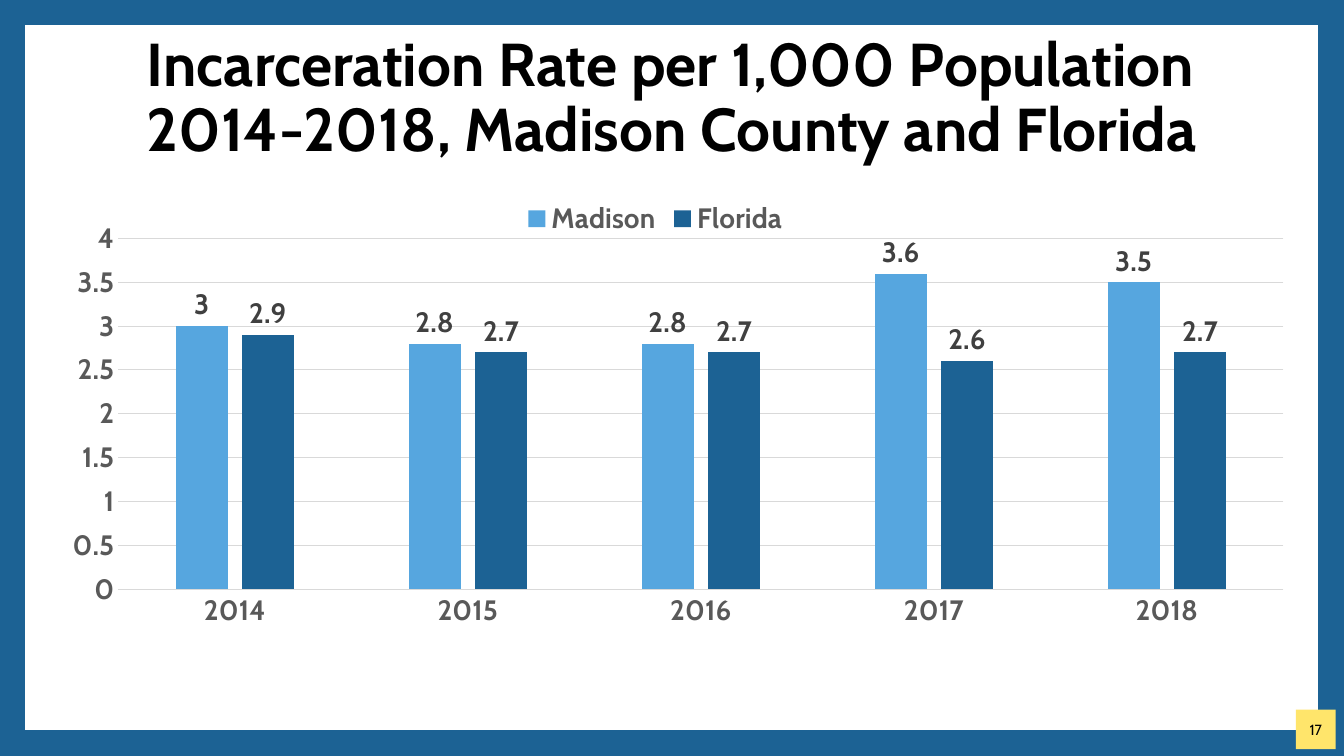
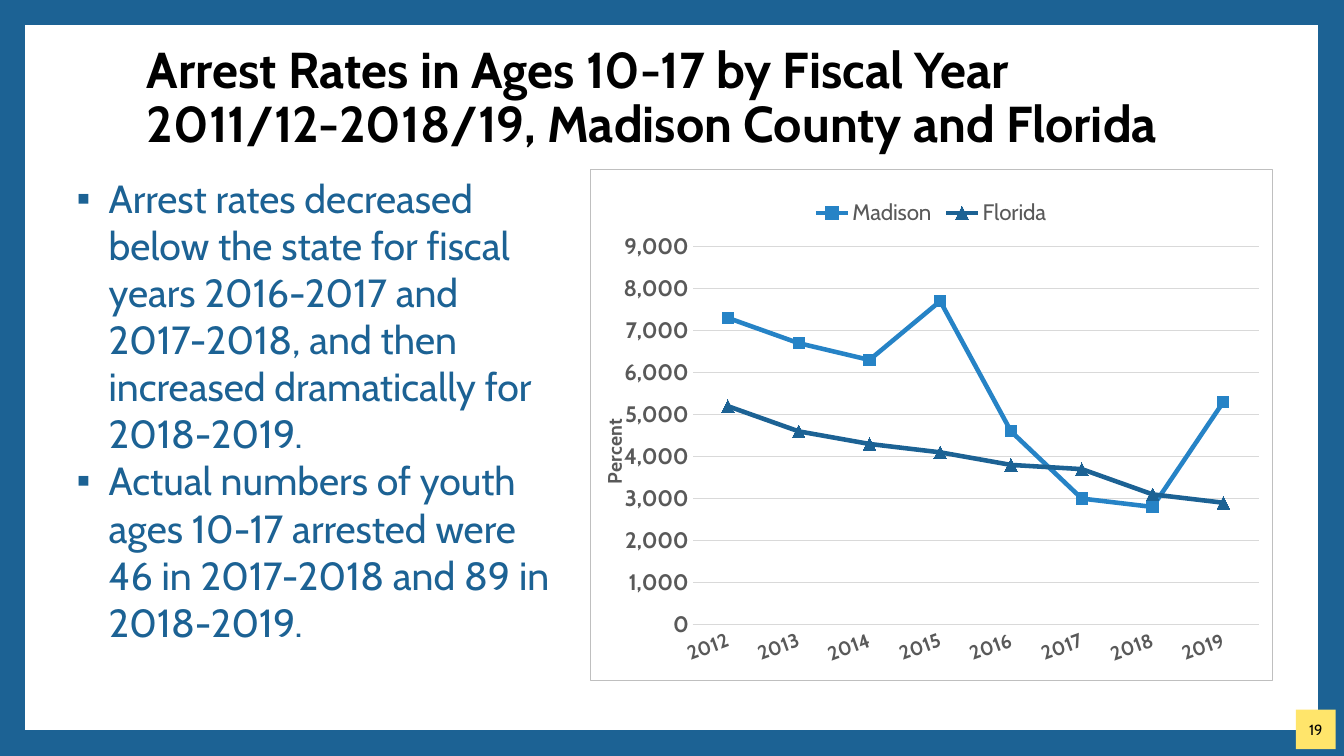
"""Build two slides charting incarceration and youth arrest rates."""
from dataclasses import dataclass

from lxml.etree import SubElement
from pptx import Presentation
from pptx.chart.chart import Chart
from pptx.chart.data import CategoryChartData
from pptx.dml.color import RGBColor
from pptx.enum.chart import (XL_CHART_TYPE, XL_LABEL_POSITION,
                             XL_LEGEND_POSITION, XL_MARKER_STYLE, XL_TICK_MARK)
from pptx.enum.shapes import MSO_SHAPE
from pptx.enum.text import MSO_ANCHOR, MSO_AUTO_SIZE, PP_ALIGN
from pptx.oxml import parse_xml
from pptx.oxml.ns import nsdecls, qn
from pptx.oxml.xmlchemy import BaseOxmlElement
from pptx.presentation import Presentation as Deck
from pptx.slide import Slide
from pptx.text.text import Font
from pptx.util import Cm, Length, Pt

FONT_NAME = "Cabin"
BLACK = RGBColor(0x00, 0x00, 0x00)
NAVY = RGBColor(0x1C, 0x62, 0x94)
MID_BLUE = RGBColor(0x26, 0x83, 0xC6)
SKY_BLUE = RGBColor(0x56, 0xA6, 0xDF)
YELLOW = RGBColor(0xFF, 0xE5, 0x6B)
LABEL_GRAY = RGBColor(0x40, 0x40, 0x40)
AXIS_GRAY = RGBColor(0x59, 0x59, 0x59)
GRID_GRAY = RGBColor(0xD9, 0xD9, 0xD9)
BORDER_GRAY = RGBColor(0xBF, 0xBF, 0xBF)
ANGLE_UNIT = 60000


@dataclass(frozen=True)
class Box:
    """A rectangle in centimetres."""
    left: float
    top: float
    width: float
    height: float

    def lengths(self) -> tuple[Length, Length, Length, Length]:
        """Return the rectangle as lengths."""
        return Cm(self.left), Cm(self.top), Cm(self.width), Cm(self.height)


@dataclass(frozen=True)
class SeriesSpec:
    """One series with its colour."""
    name: str
    values: tuple[float, ...]
    color: RGBColor


@dataclass(frozen=True)
class ChartSpec:
    """The data, scale and text sizes of a chart."""
    kind: XL_CHART_TYPE
    box: Box
    first_year: int
    series: tuple[SeriesSpec, ...]
    maximum: float
    unit: float
    number_format: str
    category_size: float
    value_size: float
    legend_size: float
    legend_bold: bool
    plot_layout: tuple[float, ...]
    legend_layout: tuple[float, ...]


FRAME = Box(0.3, 0.3, 33.25, 18.42)
BADGE = Box(32.66, 17.88, 1, 1)
TITLE = Box(3.45, 1.17, 29.21, 2.67)
FINDINGS = Box(1.55, 4.27, 12.75, 12.7)

INCARCERATION = ChartSpec(
    XL_CHART_TYPE.COLUMN_CLUSTERED, Box(1.09, 4.34, 31.57, 11.94), 2014,
    (SeriesSpec("Madison", (3, 2.8, 2.8, 3.6, 3.5), SKY_BLUE),
     SeriesSpec("Florida", (2.9, 2.7, 2.7, 2.6, 2.7), NAVY)),
    4, 0.5, "General", 20, 20, 20, True,
    (0.06, 0.14, 0.93, 0.74), (0.38, 0.05))

ARRESTS = ChartSpec(
    XL_CHART_TYPE.LINE_MARKERS, Box(14.86, 4.27, 17.22, 12.9), 2012,
    (SeriesSpec("Madison", (7300, 6700, 6300, 7700, 4600, 3000, 2800, 5300), MID_BLUE),
     SeriesSpec("Florida", (5200, 4600, 4300, 4100, 3800, 3700, 3100, 2900), NAVY)),
    9000, 1000, "#,##0", 14, 16, 16, False,
    (0.15, 0.15, 0.83, 0.74), (0.32, 0.05))

FINDING_TEXTS = (
    "Arrest rates decreased below the state for fiscal years 2016-2017 and "
    "2017-2018, and then increased dramatically for 2018-2019.",
    "Actual numbers of youth ages 10-17 arrested were 46 in 2017-2018 and 89 in "
    "2018-2019.",
)


def style_font(font: Font, size: float, color: RGBColor, bold: bool = False) -> None:
    """Apply the shared typeface with a size, colour and weight."""
    font.name = FONT_NAME
    font.size = Pt(size)
    font.bold = bold
    font.color.rgb = color


def add_frame(slide: Slide) -> None:
    """Draw the thick border around the slide."""
    frame = slide.shapes.add_shape(MSO_SHAPE.RECTANGLE, *FRAME.lengths())
    frame.shadow.inherit = False
    frame.fill.background()
    frame.line.color.rgb = NAVY
    frame.line.width = Pt(19)
    SubElement(frame.line._get_or_add_ln(), qn("a:miter"), lim="800000")


def add_badge(slide: Slide, number: int) -> None:
    """Draw the page number on its yellow square."""
    badge = slide.shapes.add_shape(MSO_SHAPE.RECTANGLE, *BADGE.lengths())
    badge.shadow.inherit = False
    badge.fill.solid()
    badge.fill.fore_color.rgb = YELLOW
    badge.line.fill.background()
    frame = badge.text_frame
    frame.margin_left = frame.margin_right = 0
    frame.vertical_anchor = MSO_ANCHOR.MIDDLE
    paragraph = frame.paragraphs[0]
    paragraph.text = str(number)
    paragraph.alignment = PP_ALIGN.CENTER
    style_font(paragraph.font, 10.5, BLACK)


def set_title(slide: Slide, lines: tuple[str, str], size: float) -> None:
    """Place the title and break it into two lines."""
    title = slide.shapes.title
    title.left, title.top, title.width, title.height = TITLE.lengths()
    frame = title.text_frame
    frame.auto_size = MSO_AUTO_SIZE.NONE
    frame.vertical_anchor = MSO_ANCHOR.MIDDLE
    paragraph = frame.paragraphs[0]
    paragraph.add_run().text = lines[0]
    paragraph.add_line_break()
    paragraph.add_run().text = lines[1]
    paragraph.alignment = PP_ALIGN.LEFT
    paragraph.line_spacing = 0.9
    style_font(paragraph.font, size, BLACK, True)


def add_slide(presentation: Deck, number: int, lines: tuple[str, str],
              title_size: float) -> Slide:
    """Add a slide with border, page number and title."""
    slide = presentation.slides.add_slide(presentation.slide_layouts[5])
    add_frame(slide)
    add_badge(slide, number)
    set_title(slide, lines, title_size)
    return slide


def add_findings(slide: Slide) -> None:
    """Write the bulleted findings."""
    frame = slide.shapes.add_textbox(*FINDINGS.lengths()).text_frame
    frame.word_wrap = True
    for index, text in enumerate(FINDING_TEXTS):
        paragraph = frame.add_paragraph() if index else frame.paragraphs[0]
        paragraph.text = text
        properties = paragraph._p.get_or_add_pPr()
        properties.set("marL", str(Cm(0.94)))
        properties.set("indent", str(Cm(-0.81)))
        color = SubElement(properties, qn("a:buClr"))
        SubElement(color, qn("a:srgbClr"), val=str(NAVY))
        SubElement(properties, qn("a:buFont"), typeface="Arial")
        SubElement(properties, qn("a:buChar"), char="▪")
        style_font(paragraph.font, 28, NAVY)


def place(element: BaseOxmlElement, index: int, values: tuple[float, ...],
          inner: bool = False) -> None:
    """Give a chart part a manual layout as fractions of the chart."""
    for old_layout in element.findall(qn("c:layout")):
        element.remove(old_layout)
    layout = parse_xml(f"<c:layout {nsdecls('c')}><c:manualLayout/></c:layout>")
    manual = layout[0]
    if inner:
        SubElement(manual, qn("c:layoutTarget"), val="inner")
    for name in ("xMode", "yMode"):
        SubElement(manual, qn(f"c:{name}"), val="edge")
    for name, value in zip("xywh", values):
        SubElement(manual, qn(f"c:{name}"), val=str(value))
    element.insert(index, layout)


def style_axes(chart: Chart, spec: ChartSpec) -> None:
    """Set scale, gridlines and labels of both axes."""
    category_axis, value_axis = chart.category_axis, chart.value_axis
    for axis, size in ((category_axis, spec.category_size), (value_axis, spec.value_size)):
        axis.major_tick_mark = axis.minor_tick_mark = XL_TICK_MARK.NONE
        style_font(axis.tick_labels.font, size, AXIS_GRAY, True)
    value_axis.minimum_scale = 0
    value_axis.maximum_scale = spec.maximum
    value_axis.major_unit = spec.unit
    value_axis.tick_labels.number_format = spec.number_format
    value_axis.tick_labels.number_format_is_linked = False
    value_axis.format.line.fill.background()
    value_axis.has_major_gridlines = True
    for line in (category_axis.format.line, value_axis.major_gridlines.format.line):
        line.color.rgb = GRID_GRAY
        line.width = Pt(0.75)


def add_rate_chart(slide: Slide, spec: ChartSpec) -> Chart:
    """Add a chart with the shared axes and legend."""
    data = CategoryChartData()
    data.categories = [str(spec.first_year + offset)
                       for offset in range(len(spec.series[0].values))]
    for series in spec.series:
        data.add_series(series.name, series.values)
    chart = slide.shapes.add_chart(spec.kind, *spec.box.lengths(), data).chart
    style_font(chart.font, 10, BLACK)
    chart.has_title = False
    chart.plots[0].vary_by_categories = False
    style_axes(chart, spec)
    chart.has_legend = True
    chart.legend.position = XL_LEGEND_POSITION.BOTTOM
    chart.legend.include_in_layout = False
    style_font(chart.legend.font, spec.legend_size, AXIS_GRAY, spec.legend_bold)
    place(chart._chartSpace.chart.plotArea, 0, spec.plot_layout, True)
    place(chart.legend._element, 1, spec.legend_layout)
    return chart


def style_columns(chart: Chart, spec: ChartSpec) -> None:
    """Colour the columns and show their values."""
    plot = chart.plots[0]
    plot.gap_width = 219
    plot.overlap = -27
    for series, series_spec in zip(plot.series, spec.series):
        series.format.fill.solid()
        series.format.fill.fore_color.rgb = series_spec.color
        labels = series.data_labels
        labels.show_value = True
        labels.position = XL_LABEL_POSITION.OUTSIDE_END
        style_font(labels.font, 20, LABEL_GRAY, True)


def style_lines(chart: Chart, spec: ChartSpec) -> None:
    """Colour the lines and give each its marker."""
    markers = ((XL_MARKER_STYLE.SQUARE, 8), (XL_MARKER_STYLE.TRIANGLE, 9))
    for series, series_spec, (style, size) in zip(chart.plots[0].series, spec.series, markers):
        series.smooth = False
        series.format.line.color.rgb = series_spec.color
        series.format.line.width = Pt(3.25)
        series.marker.style = style
        series.marker.size = size
        marker_format = series.marker.format
        marker_format.fill.solid()
        marker_format.fill.fore_color.rgb = series_spec.color
        marker_format.line.color.rgb = series_spec.color


def finish_arrest_chart(chart: Chart) -> None:
    """Add the axis title, slanted years and chart border."""
    axis_title = chart.value_axis.axis_title
    frame = axis_title.text_frame
    paragraph = frame.paragraphs[0]
    paragraph.text = "Percent"
    style_font(paragraph.font, 14, AXIS_GRAY, True)
    year_text = chart.category_axis._element.find(qn("c:txPr"))
    for text_body, degrees in ((frame._txBody, -90), (year_text, -20)):
        body = text_body.find(qn("a:bodyPr"))
        body.set("rot", str(degrees * ANGLE_UNIT))
        body.set("vert", "horz")
    place(axis_title._element, 1, (0.01, 0.48))
    border = parse_xml(
        f"<c:spPr {nsdecls('c', 'a')}><a:noFill/><a:ln w='{Pt(0.75)}'><a:solidFill>"
        f"<a:srgbClr val='{BORDER_GRAY}'/></a:solidFill></a:ln></c:spPr>")
    chart._chartSpace.chart.addnext(border)


def main() -> None:
    """Build and save the presentation."""
    presentation = Presentation()
    presentation.slide_width = Cm(33.87)
    presentation.slide_height = Cm(19.05)
    slide = add_slide(presentation, 17, ("Incarceration Rate per 1,000 Population",
                                         "2014-2018, Madison County and Florida"), 43.2)
    style_columns(add_rate_chart(slide, INCARCERATION), INCARCERATION)
    slide = add_slide(presentation, 19, ("Arrest Rates in Ages 10-17 by Fiscal Year",
                                         "2011/12-2018/19, Madison County and Florida"), 36)
    add_findings(slide)
    chart = add_rate_chart(slide, ARRESTS)
    style_lines(chart, ARRESTS)
    finish_arrest_chart(chart)
    presentation.save("out.pptx")


if __name__ == "__main__":
    main()
